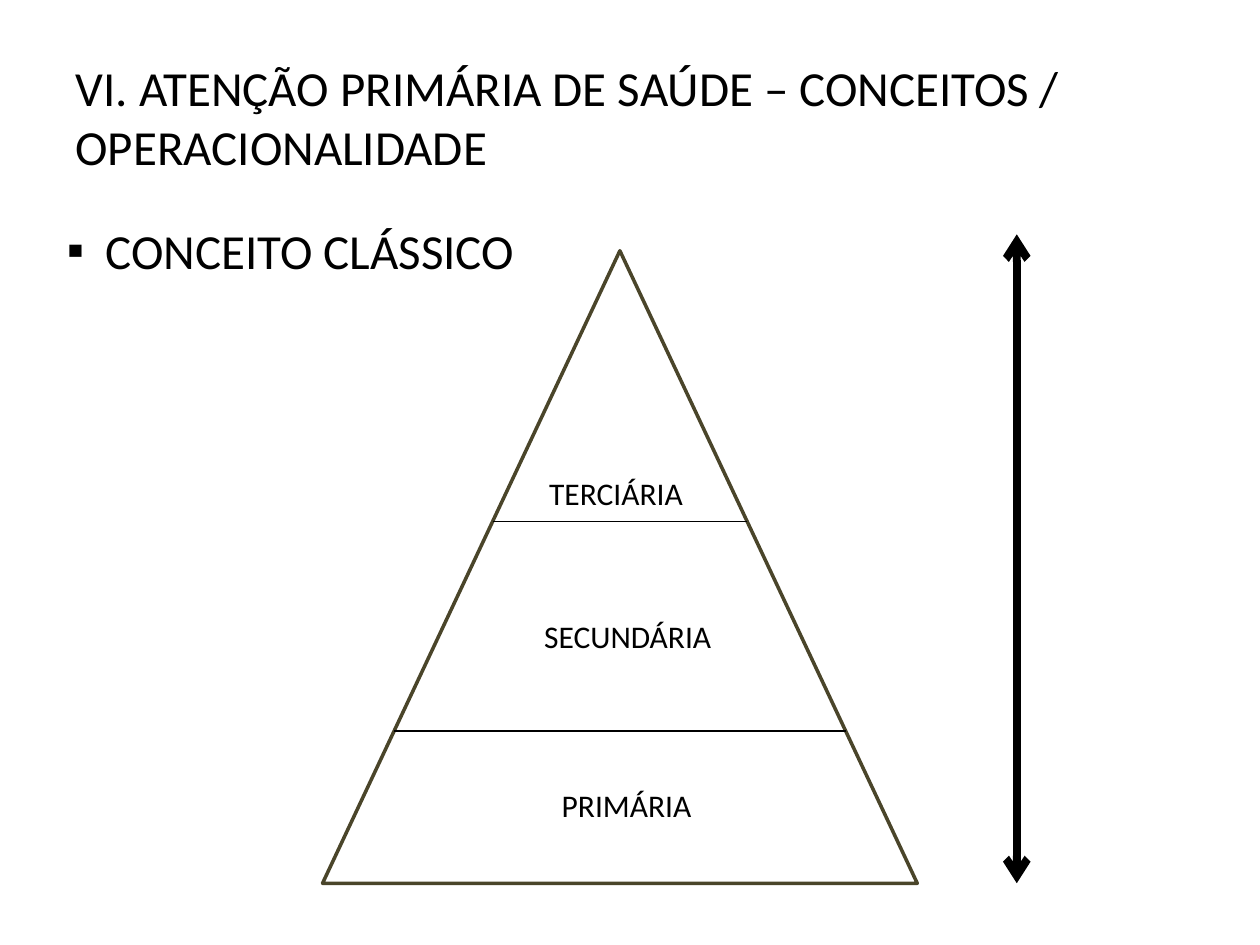
from dataclasses import dataclass

import pptx
import pptx.util
import pptx.dml.color
import pptx.enum.shapes
import pptx.enum.text
from lxml import etree
from pptx.oxml.ns import qn
from pptx.util import Inches, Pt


@dataclass(frozen=True)
class Theme:
    font: str = "Calibri"
    ink: str = "000000"
    outline: str = "4A452A"
    heading: int = 28
    label: int = 18


THEME = Theme()
TITLE = "VI. ATENÇÃO PRIMÁRIA DE SAÚDE – CONCEITOS / OPERACIONALIDADE"
BULLET = "CONCEITO CLÁSSICO"
# Care level, then left, top and width of its label
LEVELS = [
    ("TERCIÁRIA", 4.26, 3.71, 1.27),
    ("SECUNDÁRIA", 4.22, 4.85, 1.54),
    ("PRIMÁRIA", 4.36, 6.19, 1.24),
]
DIVIDERS = [4.14, 5.8]
PYRAMID = (2.56, 1.99, 4.72, 5.02)
ARROW_X, ARROW_TOP = 8.07, 1.86


def rgb(value):
    return pptx.dml.color.RGBColor.from_string(value)


def write(shape, text, size, wrap=True):
    frame = shape.text_frame
    frame.text = text
    frame.word_wrap = wrap
    frame.auto_size = pptx.enum.text.MSO_AUTO_SIZE.NONE
    para = frame.paragraphs[0]
    para.alignment = pptx.enum.text.PP_ALIGN.LEFT
    para.space_before = Pt(0)
    para.font.name = THEME.font
    para.font.size = Pt(size)
    para.font.color.rgb = rgb(THEME.ink)
    return para


def place(shape, *box):
    shape.left, shape.top, shape.width, shape.height = map(Inches, box)


def add_line(slide, start, end, width):
    line = slide.shapes.add_connector(
        pptx.enum.shapes.MSO_CONNECTOR.STRAIGHT, *map(Inches, start + end))
    line.line.color.rgb = rgb(THEME.ink)
    line.line.width = Pt(width)
    etree.SubElement(line._element.spPr, qn("a:effectLst"))
    return line


def add_headings(slide):
    title, body = slide.placeholders
    place(title, 0.5, 0.3, 9, 1.25)
    write(title, TITLE, THEME.heading)
    place(body, 0.43, 1.7, 3.79, 0.57)
    para = write(body, BULLET, THEME.heading, wrap=False)
    properties = para._p.get_or_add_pPr()
    indent = Inches(0.31)
    properties.set("marL", str(indent))
    properties.set("indent", str(-indent))
    bullet = etree.Element(qn("a:buChar"), char="▪")
    properties.insert_element_before(bullet, "a:tabLst", "a:defRPr", "a:extLst")


def add_pyramid(slide):
    left, top, width, height = PYRAMID
    pyramid = slide.shapes.add_shape(
        pptx.enum.shapes.MSO_SHAPE.ISOSCELES_TRIANGLE, *map(Inches, PYRAMID))
    pyramid.shadow.inherit = False
    pyramid.fill.background()
    pyramid.line.color.rgb = rgb(THEME.outline)
    pyramid.line.width = Pt(2)

    center = left + width / 2
    for y in DIVIDERS:
        half = (y - top) / height * width / 2
        add_line(slide, (center - half, y), (center + half, y), 1)

    for text, x, y, label_width in LEVELS:
        box = slide.shapes.add_textbox(*map(Inches, (x, y, label_width, 0.4)))
        write(box, text, THEME.label, wrap=False)


def add_double_arrow(slide):
    bottom = PYRAMID[1] + PYRAMID[3]
    arrow = add_line(slide, (ARROW_X, ARROW_TOP), (ARROW_X, bottom), 4.5)
    outline = arrow.line._get_or_add_ln()
    for end in ("a:headEnd", "a:tailEnd"):
        etree.SubElement(outline, qn(end), type="arrow")


def main():
    deck = pptx.Presentation()
    deck.slide_width, deck.slide_height = Inches(10), Inches(7.5)
    slide = deck.slides.add_slide(deck.slide_layouts[1])
    add_headings(slide)
    add_pyramid(slide)
    add_double_arrow(slide)
    deck.save("out.pptx")


if __name__ == "__main__":
    main()
